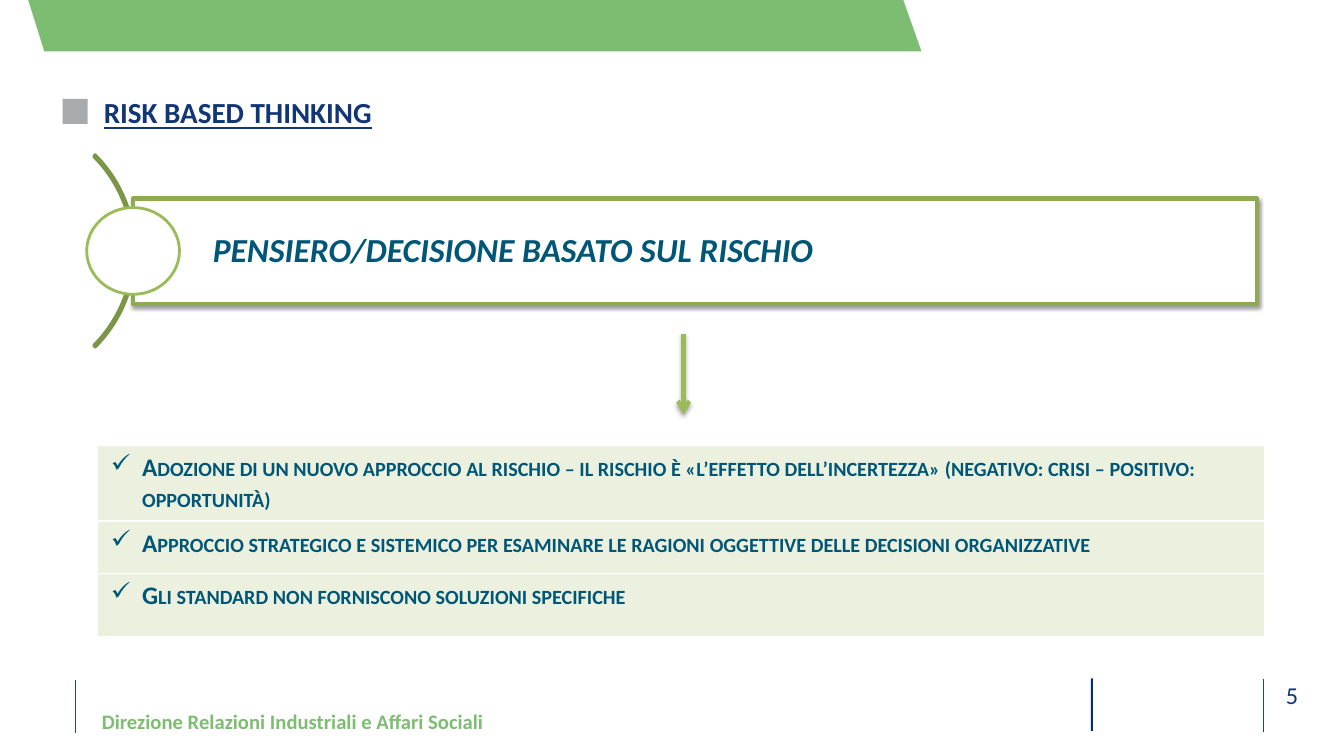
from dataclasses import dataclass

from lxml.etree import SubElement
from pptx import Presentation
from pptx.dml.color import RGBColor
from pptx.enum.shapes import MSO_CONNECTOR as Connector, MSO_SHAPE as Preset
from pptx.enum.text import MSO_ANCHOR as Anchor, MSO_AUTO_SIZE as AutoSize, PP_ALIGN as Align
from pptx.oxml.ns import qn
from pptx.util import Inches, Pt

TITLE = "risk based thinking"
KEY_IDEA = "PENSIERO/DECISIONE BASATO SUL RISCHIO"
POINTS = [
    "Adozione di un nuovo approccio al rischio – il rischio è «l’effetto dell’incertezza» "
    "(negativo: crisi – positivo: opportunità)",
    "Approccio strategico e sistemico per esaminare le ragioni oggettive delle decisioni organizzative",
    "Gli standard non forniscono soluzioni specifiche",
]
POINT_HEIGHTS = [0.73, 0.52, 0.63]
DEPARTMENT = "Direzione Relazioni Industriali e Affari Sociali"
PAGE_NUMBER = "5"
BANNER_OUTLINE = [(0.28, 0), (0.44, 0.51), (9.14, 0.51), (8.96, 0)]
FOOTER_RULES = [(0.75, 6.75), (12.53, 6.74)]
FOOTER_RULE_HEIGHT = 0.52


@dataclass(frozen=True)
class Theme:
    font: str = "Calibri"
    white: str = "FFFFFF"
    navy: str = "103676"
    rule: str = "11498A"
    bar: str = "002E6E"
    teal: str = "005677"
    grey: str = "939598"
    leaf: str = "7DBD71"
    olive: str = "9BBB59"
    frame: str = "8DAA51"
    arc: str = "7C9647"
    pale: str = "EBF1DE"
    title_size: float = 26
    idea_size: float = 24
    point_size: float = 18
    page_size: float = 17.3
    footer_size: float = 14.7


theme = Theme()


def rgb(color):
    return RGBColor.from_string(color)


def inches(*lengths):
    return [Inches(length) for length in lengths]


def apply(target, formats):
    for name, value in formats.items():
        setattr(target, name, value)


def write(frame, text, size, color, margins=(0, 0, 0, 0), align=Align.LEFT,
          anchor=Anchor.TOP, small_caps=False, **font_formats):
    """Fill a text frame with one formatted paragraph; margins run left, top, right, bottom."""
    sides = ("margin_left", "margin_top", "margin_right", "margin_bottom")
    apply(frame, dict(zip(sides, inches(*margins))))
    apply(frame, {"word_wrap": True, "auto_size": AutoSize.NONE, "vertical_anchor": anchor})
    paragraph = frame.paragraphs[0]
    paragraph.alignment = align
    add_words(paragraph, text, size, color, small_caps, **font_formats)
    return paragraph


def add_words(paragraph, text, size, color, small_caps=False, **font_formats):
    words = paragraph.add_run()
    words.text = text
    apply(words.font, {"name": theme.font, "size": Pt(size), **font_formats})
    words.font.color.rgb = rgb(color)
    if small_caps:
        words._r.get_or_add_rPr().set("cap", "small")


def paint(shape, fill=None, line=None, width=1):
    shape.shadow.inherit = False
    if fill:
        shape.fill.solid()
        shape.fill.fore_color.rgb = rgb(fill)
    else:
        shape.fill.background()
    if line:
        shape.line.color.rgb = rgb(line)
        shape.line.width = Pt(width)
    else:
        shape.line.fill.background()
    return shape


def add_preset(slide, preset, box, **colors):
    return paint(slide.shapes.add_shape(preset, *inches(*box)), **colors)


def add_line(slide, start, end, color, width):
    line = slide.shapes.add_connector(Connector.STRAIGHT, *inches(*start, *end))
    line.line.color.rgb = rgb(color)
    line.line.width = Pt(width)
    SubElement(line._element.spPr, qn("a:effectLst"))
    return line


def drop_shadow(shape, alpha, blur, distance):
    """Cast a black shadow straight down; alpha is a percentage, lengths are points."""
    effects = shape._element.spPr.find(qn("a:effectLst"))
    shadow = SubElement(effects, qn("a:outerShdw"), blurRad=str(Pt(blur)),
                        dist=str(Pt(distance)), dir="5400000", rotWithShape="0")
    black = SubElement(shadow, qn("a:srgbClr"), val="000000")
    SubElement(black, qn("a:alpha"), val=str(alpha * 1000))


def add_check_bullet(paragraph, indent):
    properties = paragraph._p.get_or_add_pPr()
    apply_indent = {"marL": Inches(indent), "indent": -Inches(indent)}
    for name, value in apply_indent.items():
        properties.set(name, str(value))
    SubElement(properties, qn("a:buChar"), char="✓")


def add_header(slide):
    outline = [tuple(inches(*point)) for point in BANNER_OUTLINE]
    builder = slide.shapes.build_freeform(*outline[0], scale=1.0)
    builder.add_line_segments(outline[1:], close=True)
    paint(builder.convert_to_shape(), fill=theme.leaf)

    title = slide.shapes.title
    apply(title, dict(zip(("left", "top", "width", "height"), inches(1.03, 0.86, 11.28, 0.47))))
    write(title.text_frame, TITLE, theme.title_size, theme.navy,
          small_caps=True, bold=True, underline=True)

    marker = add_preset(slide, Preset.RECTANGLE, (0.62, 0.98, 0.25, 0.25), fill=theme.grey)
    marker_color = marker._element.spPr.find(qn("a:solidFill"))[0]
    SubElement(marker_color, qn("a:alpha"), val="80000")


def add_key_idea(slide):
    arc = add_preset(slide, Preset.BLOCK_ARC, (-1.36, 1.14, 2.7, 2.7), line=theme.arc, width=2)
    for index, value in enumerate((189, 27, 0.009)):
        arc.adjustments[index] = value

    panel = add_preset(slide, Preset.RECTANGLE, (1.32, 1.97, 11.15, 1.05),
                       fill=theme.white, line=theme.frame, width=3)
    drop_shadow(panel, alpha=38, blur=3.1, distance=1.6)
    idea = write(panel.text_frame, KEY_IDEA, theme.idea_size, theme.teal,
                 margins=(0.79, 0.07, 0.07, 0.07), anchor=Anchor.MIDDLE, bold=True, italic=True)
    idea.line_spacing = 0.9

    add_preset(slide, Preset.OVAL, (0.86, 2.06, 0.92, 0.86),
               fill=theme.white, line=theme.olive, width=2)

    arrow = add_line(slide, (6.78, 3.31), (6.78, 4.11), theme.olive, 3)
    drop_shadow(arrow, alpha=35, blur=3.1, distance=1.8)
    SubElement(arrow.line._get_or_add_ln(), qn("a:tailEnd"), type="arrow")


def add_points(slide):
    box = inches(0.97, 4.42, 11.57, sum(POINT_HEIGHTS))
    table = slide.shapes.add_table(len(POINTS), 1, *box).table
    for row, height, point in zip(table.rows, POINT_HEIGHTS, POINTS):
        row.height = Inches(height)
        cell = row.cells[0]
        cell.fill.solid()
        cell.fill.fore_color.rgb = rgb(theme.pale)
        sides = ("margin_left", "margin_top", "margin_right", "margin_bottom")
        apply(cell, dict(zip(sides, inches(0.13, 0.07, 0.13, 0.07))))
        paragraph = cell.text_frame.paragraphs[0]
        add_check_bullet(paragraph, 0.31)
        add_words(paragraph, point, theme.point_size, theme.teal, small_caps=True, bold=True)


def add_footer(slide):
    for left, top in FOOTER_RULES:
        add_line(slide, (left, top), (left, top + FOOTER_RULE_HEIGHT), theme.rule, 1)
    add_preset(slide, Preset.RECTANGLE, (10.82, 6.73, 0.02, FOOTER_RULE_HEIGHT), fill=theme.bar)
    department = slide.shapes.add_textbox(*inches(1.01, 6.75, 5.88, 0.53))
    write(department.text_frame, DEPARTMENT, theme.footer_size, theme.leaf,
          anchor=Anchor.BOTTOM, bold=True)
    page = slide.shapes.add_textbox(*inches(12.56, 6.75, 0.51, 0.31))
    write(page.text_frame, PAGE_NUMBER, theme.page_size, theme.navy, align=Align.CENTER)


def main():
    deck = Presentation()
    apply(deck, {"slide_width": Inches(13.33), "slide_height": Inches(7.5)})
    slide = deck.slides.add_slide(deck.slide_layouts[5])
    for add_part in (add_header, add_key_idea, add_points, add_footer):
        add_part(slide)
    deck.save("out.pptx")


if __name__ == "__main__":
    main()
